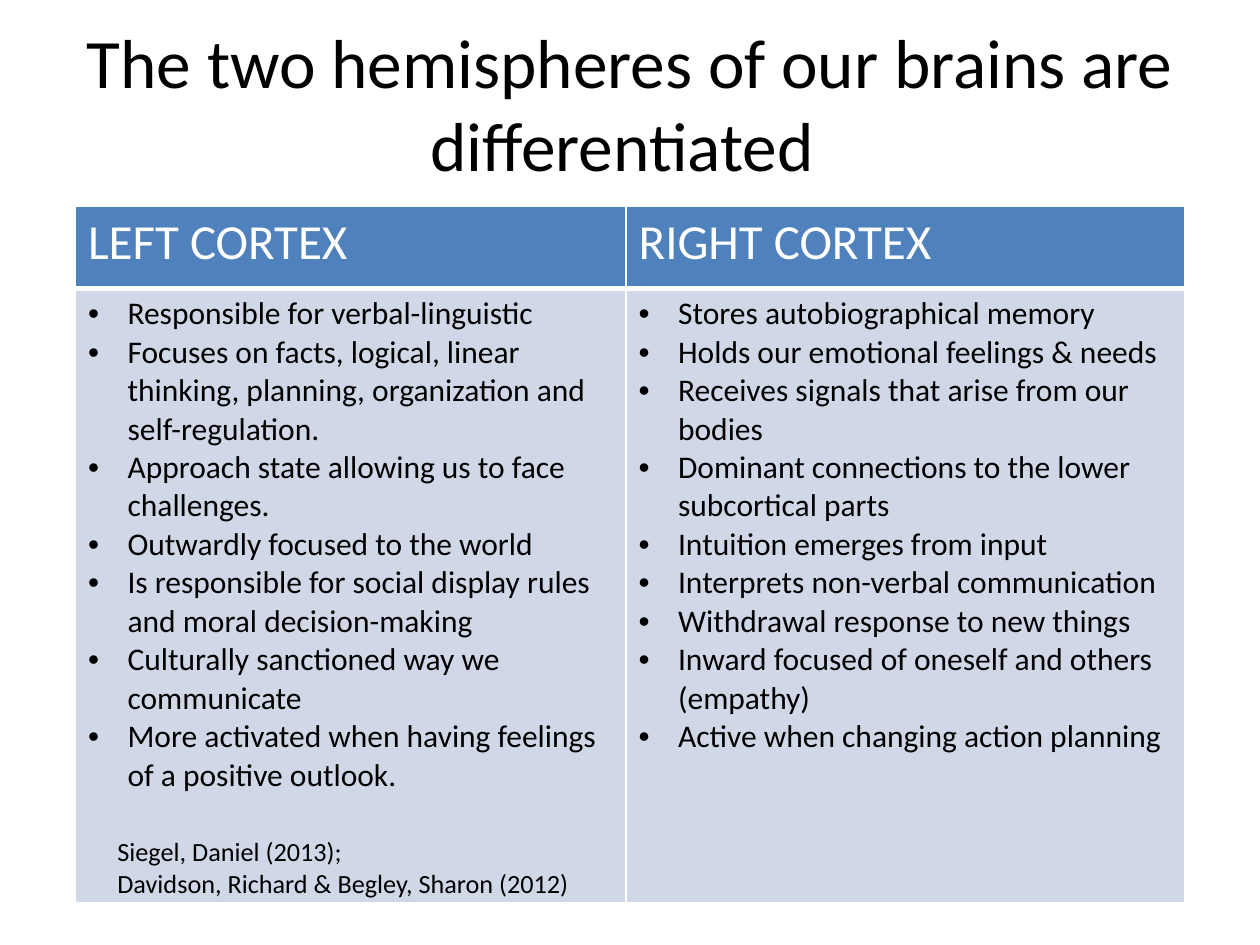
import dataclasses

import pptx
import pptx.dml.color
import pptx.enum.text
import pptx.oxml
import pptx.oxml.ns
import pptx.util

Pt = pptx.util.Pt


@dataclasses.dataclass(frozen=True)
class Theme:
    """Colours, font and type sizes of the slide."""
    font: str = "Calibri"
    ink: str = "000000"
    paper: str = "FFFFFF"
    header: str = "4F81BD"
    body: str = "D0D8E8"
    title_size: float = 39.6
    header_size: float = 28
    body_size: float = 18
    source_size: float = 15


THEME = Theme()
TITLE = "The two hemispheres of our brains are differentiated "
SOURCES = ["Siegel, Daniel (2013);", "Davidson, Richard & Begley, Sharon (2012)"]
CORTEXES = {
    "LEFT CORTEX": [
        "Responsible for verbal-linguistic",
        "Focuses on facts, logical, linear thinking, planning, organization and self-regulation.",
        "Approach state allowing us to face challenges.",
        "Outwardly focused to the world",
        "Is responsible for social display rules and moral decision-making",
        "Culturally sanctioned way we communicate",
        "More activated when having feelings of a positive outlook.",
    ],
    "RIGHT CORTEX": [
        "Stores autobiographical memory",
        "Holds our emotional feelings & needs",
        "Receives signals that arise from our bodies",
        "Dominant connections to the lower subcortical parts",
        "Intuition emerges from input",
        "Interprets non-verbal communication",
        "Withdrawal response to new things",
        "Inward focused of oneself and others (empathy)",
        "Active when changing action planning",
    ],
}


def rgb(code):
    """Return the colour for a hex code."""
    return pptx.dml.color.RGBColor.from_string(code)


def drawing_element(tag, **attributes):
    """Return a new DrawingML element with the given attributes."""
    element = pptx.oxml.parse_xml(f"<a:{tag} {pptx.oxml.ns.nsdecls('a')}/>")
    for name, value in attributes.items():
        element.set(name, str(value))
    return element


def write(frame, lines, *, size, color=THEME.ink, align=None, bullet_indent=None):
    """Write one paragraph per line, bulleted when an indent is given."""
    frame.word_wrap = True
    for index, line in enumerate(lines):
        paragraph = frame.add_paragraph() if index else frame.paragraphs[0]
        paragraph.alignment = align
        run = paragraph.add_run()
        run.text = line
        run.font.name, run.font.size = THEME.font, Pt(size)
        run.font.color.rgb = rgb(color)
        if bullet_indent:
            properties = paragraph._p.get_or_add_pPr()
            properties.set("marL", str(Pt(bullet_indent)))
            properties.set("indent", str(-Pt(bullet_indent)))
            properties.append(drawing_element("buFont", typeface="Arial"))
            properties.append(drawing_element("buChar", char="•"))


def paint_cell(cell, fill, bottom=1):
    """Give a cell its white borders and its fill."""
    properties = cell._tc.get_or_add_tcPr()
    for side, width in {"lnL": 1, "lnR": 1, "lnT": 1, "lnB": bottom}.items():
        border = drawing_element(side, w=Pt(width))
        solid = drawing_element("solidFill")
        solid.append(drawing_element("srgbClr", val=THEME.paper))
        border.append(solid)
        properties.append(border)
    cell.fill.solid()
    cell.fill.fore_color.rgb = rgb(fill)


def add_title(slide, left, top, width, height):
    """Place the centred title in its box."""
    frame = slide.shapes.add_textbox(Pt(left), Pt(top), Pt(width), Pt(height)).text_frame
    frame.vertical_anchor = pptx.enum.text.MSO_ANCHOR.MIDDLE
    write(frame, [TITLE], size=THEME.title_size, align=pptx.enum.text.PP_ALIGN.CENTER)


def add_comparison(slide, left, top, width, height, left_width=314.6, header_height=46.8):
    """Place the table that compares the two cortexes."""
    table = slide.shapes.add_table(
        2, len(CORTEXES), Pt(left), Pt(top), Pt(width), Pt(height)).table
    table.first_row = table.horz_banding = False
    for column, column_width in zip(table.columns, (left_width, width - left_width)):
        column.width = Pt(column_width)
    for row, row_height in zip(table.rows, (header_height, height - header_height)):
        row.height = Pt(row_height)
    for column, (cortex, traits) in enumerate(CORTEXES.items()):
        heading, details = table.cell(0, column), table.cell(1, column)
        paint_cell(heading, THEME.header, bottom=3)
        write(heading.text_frame, [cortex], size=THEME.header_size, color=THEME.paper)
        paint_cell(details, THEME.body)
        write(details.text_frame, traits, size=THEME.body_size, bullet_indent=22.5)


def add_sources(slide, left, top, width, height):
    """Place the source references in their box."""
    frame = slide.shapes.add_textbox(Pt(left), Pt(top), Pt(width), Pt(height)).text_frame
    write(frame, SOURCES, size=THEME.source_size)


def main():
    """Build and save the slide."""
    deck = pptx.Presentation()
    deck.slide_width, deck.slide_height = Pt(720), Pt(540)
    slide = deck.slides.add_slide(deck.slide_layouts[6])
    add_comparison(slide, 43.2, 118, 633.6, 398)
    add_title(slide, 36, 13.5, 648, 90)
    add_sources(slide, 60, 474, 665, 44)
    deck.save("out.pptx")


if __name__ == "__main__":
    main()
